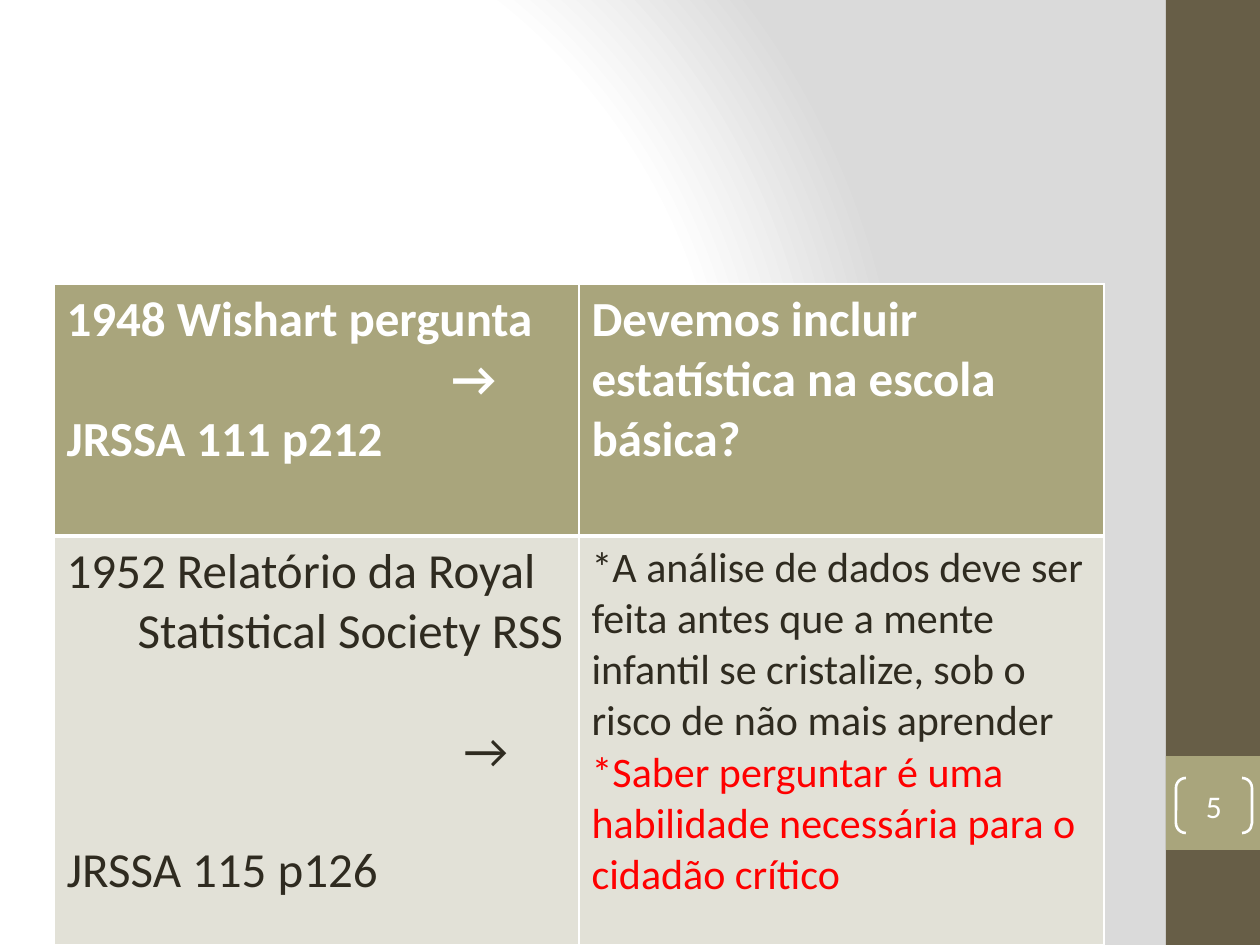
from dataclasses import dataclass

from lxml.etree import SubElement
from pptx import Presentation
from pptx.dml.color import RGBColor
from pptx.enum.shapes import MSO_SHAPE
from pptx.enum.text import MSO_ANCHOR, PP_ALIGN
from pptx.oxml import parse_xml
from pptx.oxml.ns import nsdecls, qn
from pptx.util import Pt

EMU_PER_PX = 914400 / 126


@dataclass(frozen=True)
class Theme:
    font: str = "Calibri"
    white: str = "FFFFFF"
    shade: str = "DADADA"
    bar: str = "675E47"
    accent: str = "A9A57C"
    body_fill: str = "E2E1D7"
    ink: str = "2F2B20"
    alert: str = "FF0000"
    large: int = 28
    medium: int = 24
    small: int = 18
    blank_line: int = 34


THEME = Theme()


def px(length):
    return round(length * EMU_PER_PX)


def rgb(color):
    return RGBColor.from_string(color)


def style_runs(paragraph, size, color, bold=False):
    for run in paragraph.runs:
        run.font.name = THEME.font
        run.font.size = Pt(size)
        run.font.bold = bold
        run.font.color.rgb = rgb(color)


def add_plain_shape(slide, preset, left, top, width, height, fill=None):
    shape = slide.shapes.add_shape(preset, px(left), px(top), px(width), px(height))
    shape.shadow.inherit = False
    shape.line.fill.background()
    if fill:
        shape.fill.solid()
        shape.fill.fore_color.rgb = rgb(fill)
    else:
        shape.fill.background()
    return shape


def paint_background(slide):
    """Radial gradient, white at the left and grey towards the right."""
    slide.background.fill.solid()
    solid = slide.element.find(".//" + qn("p:bgPr")).find(qn("a:solidFill"))
    stops = "".join(
        f'<a:gs pos="{position * 1000}"><a:srgbClr val="{color}"/></a:gs>'
        for position, color in ((0, THEME.white), (75, THEME.white), (100, THEME.shade))
    )
    solid.getparent().replace(solid, parse_xml(
        f'<a:gradFill {nsdecls("a")} rotWithShape="1"><a:gsLst>{stops}</a:gsLst>'
        '<a:path path="circle">'
        '<a:fillToRect l="20000" t="50000" r="100000" b="50000"/>'
        '</a:path></a:gradFill>'))


def add_side_bar(slide, left, top, width, height, page):
    add_plain_shape(slide, MSO_SHAPE.RECTANGLE, left, top, width, height, THEME.bar)
    badge_top = top + height * 4 // 5
    add_plain_shape(slide, MSO_SHAPE.RECTANGLE, left, badge_top, width, width, THEME.accent)

    number = add_plain_shape(slide, MSO_SHAPE.DOUBLE_BRACKET,
                             left + 10, badge_top + 22, 76, 55)
    number.adjustments[0] = 0.18
    number.line.color.rgb = rgb(THEME.white)
    number.line.width = Pt(1.5)
    frame = number.text_frame
    frame.margin_left = frame.margin_right = frame.margin_top = frame.margin_bottom = 0
    frame.vertical_anchor = MSO_ANCHOR.MIDDLE
    frame.text = page
    frame.paragraphs[0].alignment = PP_ALIGN.CENTER
    style_runs(frame.paragraphs[0], THEME.small, THEME.white)


def format_cell(cell, fill, bottom_width):
    cell.fill.solid()
    cell.fill.fore_color.rgb = rgb(fill)
    properties = cell._tc.get_or_add_tcPr()
    sides = (("L", 1), ("R", 1), ("T", 1), ("B", bottom_width))
    for position, (side, width) in enumerate(sides):
        properties.insert(position, parse_xml(
            f'<a:ln{side} {nsdecls("a")} w="{Pt(width)}"><a:solidFill>'
            f'<a:srgbClr val="{THEME.white}"/></a:solidFill></a:ln{side}>'))


def write_cell(cell, lines, size, color, bold=False):
    cell.text_frame.text = "\n".join(lines)
    for paragraph in cell.text_frame.paragraphs:
        style_runs(paragraph, size, color, bold)
    return cell.text_frame.paragraphs


def indent(paragraph, margin, first_line=0):
    properties = paragraph._p.get_or_add_pPr()
    properties.set("marL", str(px(margin)))
    properties.set("indent", str(px(first_line)))
    return properties


def number_from(paragraph, start):
    properties = indent(paragraph, 71, -71)
    SubElement(properties, qn("a:buFont"), typeface=THEME.font)
    SubElement(properties, qn("a:buAutoNum"), type="arabicPlain", startAt=str(start))


def add_timeline_table(slide, left, top, width, row_heights):
    table = slide.shapes.add_table(2, 2, px(left), px(top), px(width),
                                   px(sum(row_heights))).table
    table.first_row = table.horz_banding = False
    for column in table.columns:
        column.width = px(width // 2)
    for row, height, fill, bottom in zip(
            table.rows, row_heights, (THEME.accent, THEME.body_fill), (3, 1)):
        row.height = px(height)
        for cell in row.cells:
            format_cell(cell, fill, bottom)

    _, arrow, _ = write_cell(
        table.cell(0, 0), ["1948 Wishart pergunta", "→", "JRSSA 111 p212"],
        THEME.large, THEME.white, True)
    indent(arrow, 385)
    write_cell(table.cell(0, 1), ["Devemos incluir estatística na escola básica?"],
               THEME.large, THEME.white, True)

    report, arrow, source = write_cell(
        table.cell(1, 0),
        [" Relatório da Royal Statistical Society RSS", "→", "JRSSA 115 p126"],
        THEME.large, THEME.ink)
    number_from(report, 1952)
    indent(arrow, 397)
    arrow.space_before = source.space_before = Pt(THEME.blank_line)

    _, skill = write_cell(
        table.cell(1, 1),
        ["*A análise de dados deve ser feita antes que a mente infantil se cristalize, "
         "sob o risco de não mais aprender",
         "*Saber perguntar é uma habilidade necessária para o cidadão crítico"],
        THEME.medium, THEME.ink)
    style_runs(skill, THEME.medium, THEME.alert)


def main():
    presentation = Presentation()
    presentation.slide_width, presentation.slide_height = px(1260), px(945)
    slide = presentation.slides.add_slide(presentation.slide_layouts[6])
    paint_background(slide)
    add_side_bar(slide, 1166, 0, 94, 945, "5")
    add_timeline_table(slide, 54, 284, 1050, (252, 409))
    presentation.save("out.pptx")


if __name__ == "__main__":
    main()
